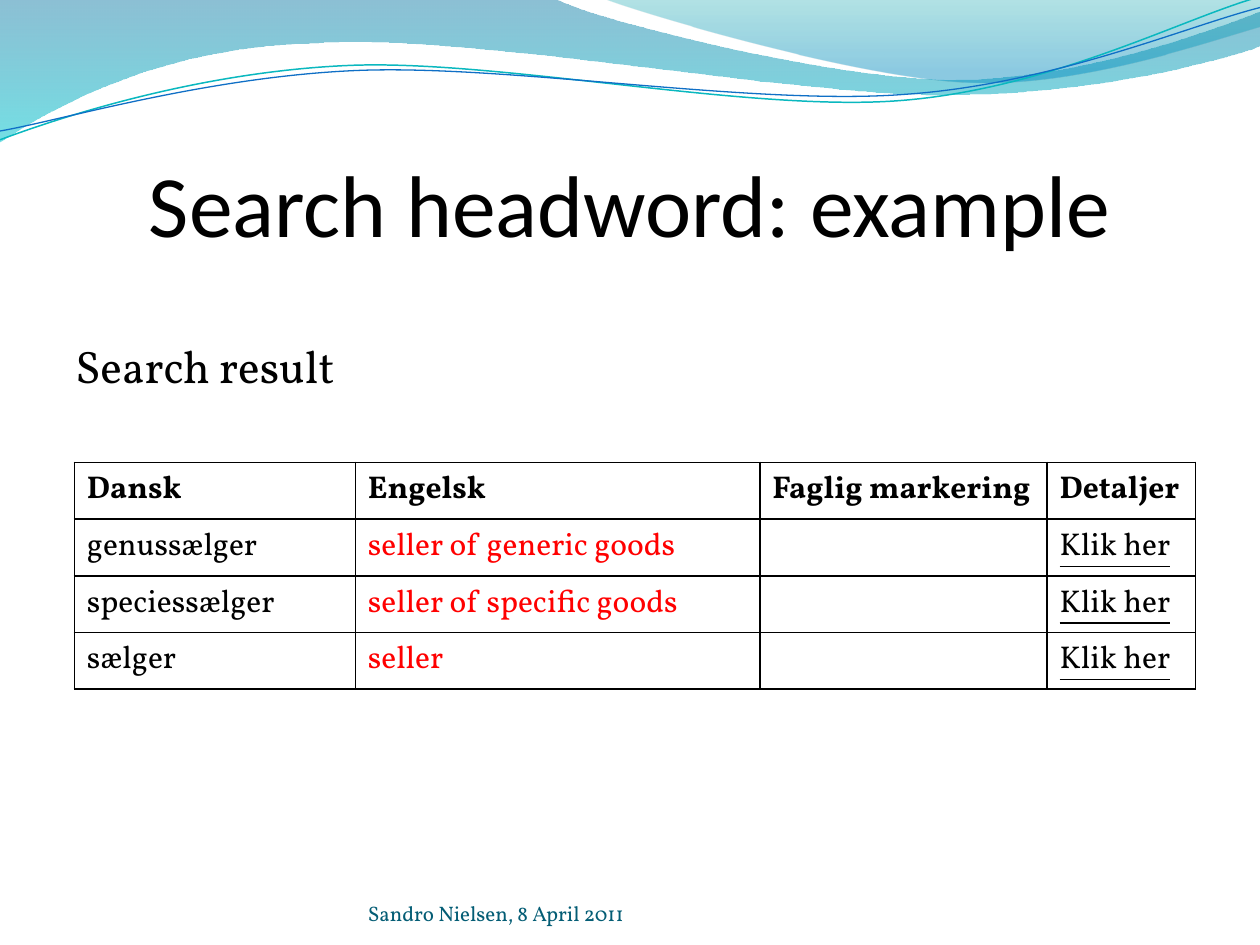
from lxml.etree import SubElement as Sub
from pptx import Presentation
from pptx.dml.color import RGBColor as RGB
from pptx.enum.text import MSO_ANCHOR as ANC, PP_ALIGN as AL
from pptx.oxml.ns import qn
from pptx.util import Inches, Pt

THEME = dict(
    black="000000", red="FF0000", footer="045D75",
    wave=[(0, "0074A1", 45), (100, "00C6CF", 55)],
    crest=[(0, "00A1A9", 30), (80, "008BBF", 45)],
    teal="0AB8BF", blue="0F6FC6",
    head_font="Calibri", body_font="Vollkorn",
    title=50, body=26, cell=18, small=12, border=1,
)

prs = Presentation()
prs.slide_width, prs.slide_height = Inches(10), Inches(7.5)
s = prs.slides.add_slide(prs.slide_layouts[6])
COL, ROW = prs.slide_width / 10, prs.slide_height / 7.5


def add_run(p, text, size, color, font=THEME["body_font"], bold=False, underline=False):
    r = p.add_run()
    r.text = text
    r.font.name, r.font.size = font, Pt(size)
    r.font.bold, r.font.underline = bold, underline
    r.font.color.rgb = RGB.from_string(color)


def add_wave(start, segments, closed):
    pts = [(seg[k] * COL, seg[k + 1] * ROW) for seg in segments for k in range(0, len(seg), 2)]
    fb = s.shapes.build_freeform(start[0] * COL, start[1] * ROW)
    fb.add_line_segments(pts, close=closed)
    sp = fb.convert_to_shape()
    sp.shadow.inherit = False
    lines = iter(list(sp._element.iter(qn("a:lnTo"))))
    for seg in segments:
        first = next(lines)
        if len(seg) == 6:
            first.tag = qn("a:cubicBezTo")
            for _ in range(2):
                extra = next(lines)
                first.append(extra[0])
                extra.getparent().remove(extra)
    return sp


bands = [
    ((0, 0), [(4.4, -0.01), (4.76, 0.17, 6.64, 0.63, 7.58, 0.63),
              (8.53, 0.63, 9.58, 0.26, 10, 0.09), (10.01, 0.36),
              (9.83, 0.44, 8.7, 0.76, 7.46, 0.75),
              (6.22, 0.75, 3.82, 0.28, 2.57, 0.34),
              (1.29, 0.36, 0.46, 0.83, -0.01, 1.13)], THEME["wave"]),
    ((4.79, -0.01), [(5.09, 0.11, 6.82, 0.62, 7.69, 0.65),
                     (8.56, 0.69, 9.61, 0.32, 10, 0.21), (10, 0)], THEME["crest"]),
]
for start, segments, stops in bands:
    sp = add_wave(start, segments, True)
    sp.line.fill.background()
    sp.fill.gradient()
    sp.fill.gradient_angle = 270
    gs_list = sp._element.spPr.find(qn("a:gradFill")).find(qn("a:gsLst"))
    for gs in list(gs_list):
        gs_list.remove(gs)
    for pos, color, alpha in stops:
        gs = Sub(gs_list, qn("a:gs"), pos=str(pos * 1000))
        clr = Sub(gs, qn("a:srgbClr"), val=color)
        Sub(clr, qn("a:alpha"), val=str(alpha * 1000))

strands = [
    ((0, 1.11), [(0.48, 0.93, 1.58, 0.57, 2.77, 0.52), (3.95, 0.47, 5.93, 0.89, 7.13, 0.8),
                 (8.33, 0.71, 9.38, 0.15, 9.98, -0.02)], THEME["teal"], 0.85),
    ((0, 1.04), [(0.47, 0.96, 1.64, 0.61, 2.83, 0.56), (4.03, 0.51, 5.97, 0.84, 7.17, 0.75),
                 (8.36, 0.67, 9.41, 0.21, 10, 0.06)], THEME["blue"], 0.75),
]
for start, segments, color, width in strands:
    sp = add_wave(start, segments, False)
    sp.fill.background()
    sp.line.color.rgb = RGB.from_string(color)
    sp.line.width = Pt(width)

texts = [
    ("Search headword: example", (0.5, 0.77, 9, 1.25), (0, 0.05, 0, 0), ANC.BOTTOM, AL.CENTER,
     THEME["title"], THEME["black"], THEME["head_font"]),
    ("Search result", (0.5, 2.12, 9, 4.8), (0.1, 0.56, 0.1, 0.05), ANC.TOP, AL.LEFT,
     THEME["body"], THEME["black"], THEME["body_font"]),
    ("Sandro Nielsen, 8 April 2011", (2.92, 6.95, 3.67, 0.4), (0, 0, 0, 0), ANC.BOTTOM, AL.LEFT,
     THEME["small"], THEME["footer"], THEME["body_font"]),
]
for text, (x, y, w, h), inset, anchor, align, size, color, font in texts:
    sp = s.shapes.add_textbox(int(x * COL), int(y * ROW), int(w * COL), int(h * ROW))
    tf = sp.text_frame
    tf.word_wrap, tf.vertical_anchor = True, anchor
    tf.margin_left, tf.margin_top, tf.margin_right, tf.margin_bottom = map(Inches, inset)
    p = tf.paragraphs[0]
    p.alignment = align
    add_run(p, text, size, color, font)

rows = [
    ["Dansk", "Engelsk", "Faglig markering", "Detaljer"],
    ["genussælger", "seller of generic goods", "", "Klik her"],
    ["speciessælger", "seller of specific goods", "", "Klik her"],
    ["sælger", "seller", "", "Klik her"],
]
widths, row_h = [2.23, 3.21, 2.28, 1.18], 0.45
table = s.shapes.add_table(len(rows), len(widths), int(0.59 * COL), int(3.67 * ROW),
                           int(sum(widths) * COL), int(len(rows) * row_h * ROW)).table
table.first_row = table.horz_banding = False
for column, w in zip(table.columns, widths):
    column.width = int(w * COL)
for i, row in enumerate(rows):
    table.rows[i].height = int(row_h * ROW)
    for j, text in enumerate(row):
        cell = table.cell(i, j)
        tcPr = cell._tc.get_or_add_tcPr()
        for side in "LRTB":
            ln = Sub(tcPr, qn(f"a:ln{side}"), w=str(Pt(THEME["border"])))
            Sub(Sub(ln, qn("a:solidFill")), qn("a:srgbClr"), val=THEME["black"])
        cell.fill.background()
        if text:
            color = THEME["red"] if i and j == 1 else THEME["black"]
            add_run(cell.text_frame.paragraphs[0], text, THEME["cell"], color,
                    bold=i == 0, underline=i > 0 and j == 3)

prs.save("out.pptx")
